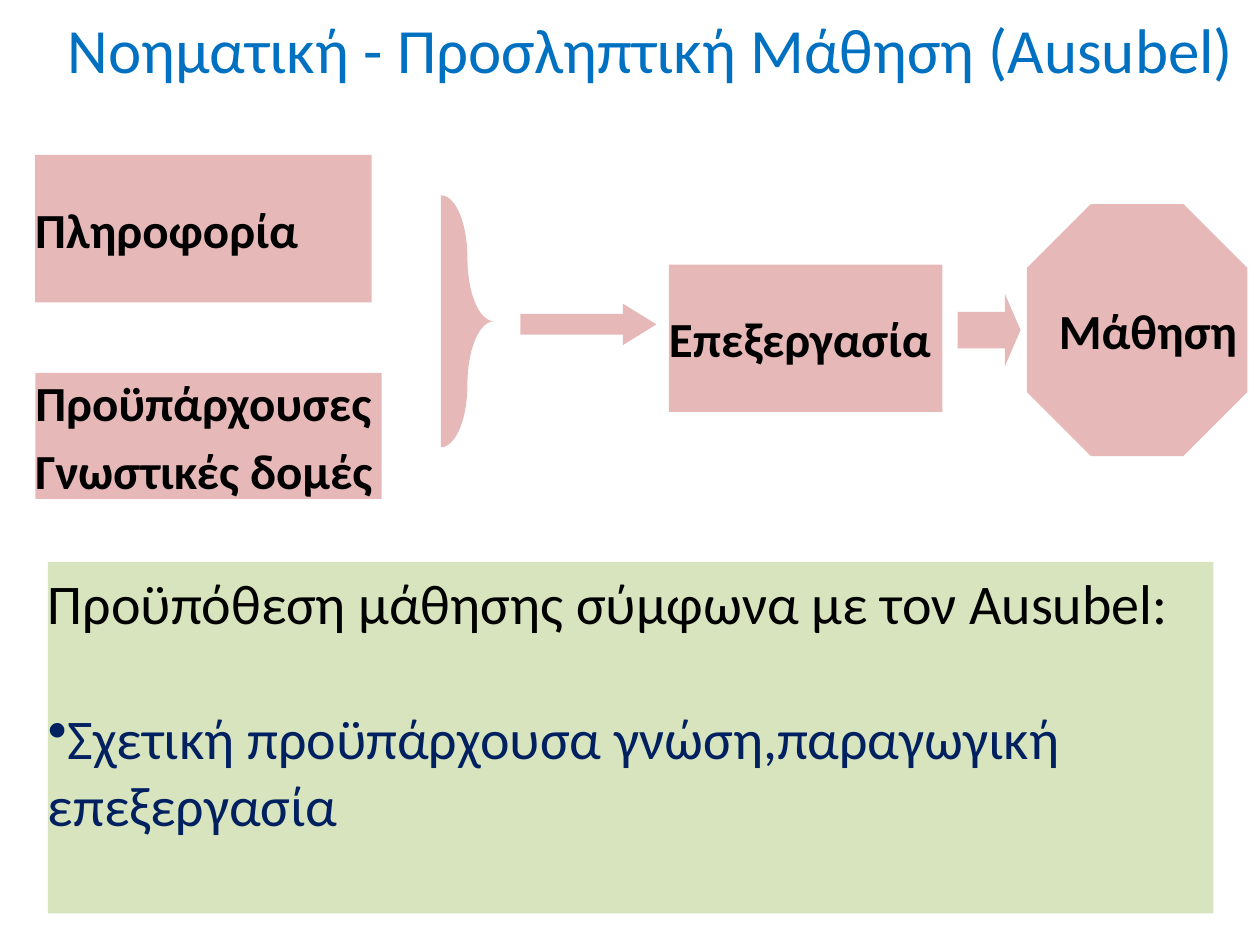
from pptx import Presentation
from pptx.dml.color import RGBColor
from pptx.enum.shapes import MSO_SHAPE as Shape
from pptx.enum.text import MSO_ANCHOR as Anchor, PP_ALIGN as Align
from pptx.oxml.xmlchemy import OxmlElement
from pptx.util import Inches, Pt

PINK = "E6B9B8"
GREEN = "D7E4BD"
BLACK = "000000"


def add_block(kind, bounds, fill, adjustments=()):
    block = page.shapes.add_shape(kind, *[Inches(length) for length in bounds])
    block.shadow.inherit = False
    block.fill.solid()
    block.fill.fore_color.rgb = RGBColor.from_string(fill)
    block.line.fill.background()
    for index, value in enumerate(adjustments):
        block.adjustments[index] = value
    frame = block.text_frame
    frame.margin_left = frame.margin_right = 0
    return block


def write(frame, index, text, size, color, bold=False, align=Align.LEFT):
    para = frame.add_paragraph() if index else frame.paragraphs[0]
    para.text = text
    para.alignment = align
    font = para.font
    font.name, font.size, font.bold = "Calibri", Pt(size), bold
    font.color.rgb = RGBColor.from_string(color)
    return para


deck = Presentation()
deck.slide_width, deck.slide_height = Inches(10), Inches(7.5)
page = deck.slides.add_slide(deck.slide_layouts[6])

title = page.shapes.add_textbox(Inches(0.33), Inches(-0.03), Inches(9.67), Inches(0.83))
title.text_frame.word_wrap = True
title.text_frame.vertical_anchor = Anchor.MIDDLE
write(title.text_frame, 0, "Νοηματική - Προσληπτική Μάθηση (Ausubel)", 36, "0070C0", align=Align.CENTER)

stages = [
    (Shape.RECTANGLE, (0.28, 1.23, 2.67, 1.17), (), ["Πληροφορία"]),
    (Shape.RECTANGLE, (0.28, 2.96, 2.75, 1), (), ["Προϋπάρχουσες", "Γνωστικές δομές"]),
    (Shape.RIGHT_BRACE, (3.5, 1.55, 0.42, 2), (1.2, 0.5), []),
    (Shape.RIGHT_ARROW, (4.13, 2.41, 1.08, 0.33), (0.5, 0.81), []),
    (Shape.RECTANGLE, (5.31, 2.1, 2.17, 1.17), (), ["Επεξεργασία"]),
    (Shape.RIGHT_ARROW, (7.6, 2.33, 0.5, 0.58), (0.5, 0.25), []),
    (Shape.OCTAGON, (8.15, 1.62, 1.75, 2), (0.29,), ["Μάθηση"]),
]
for kind, bounds, adjustments, lines in stages:
    frame = add_block(kind, bounds, PINK, adjustments).text_frame
    frame.word_wrap = False
    frame.vertical_anchor = Anchor.MIDDLE
    for index, line in enumerate(lines):
        para = write(frame, index, line, 28, BLACK, bold=True)
        if index:
            para.space_before = Pt(5.6)

premise = add_block(Shape.RECTANGLE, (0.38, 4.46, 9.25, 2.79), GREEN).text_frame
premise.word_wrap = True
premise.vertical_anchor = Anchor.TOP
write(premise, 0, "Προϋπόθεση μάθησης σύμφωνα με τον Ausubel:", 32, BLACK)
condition = premise.add_paragraph()
condition.space_before = Pt(39)
bullet = OxmlElement("a:buChar")
bullet.set("char", "•")
condition._p.get_or_add_pPr().append(bullet)
condition.text = "Σχετική προϋπάρχουσα γνώση,παραγωγική επεξεργασία"
condition.alignment = Align.LEFT
condition.font.name, condition.font.size = "Calibri", Pt(32)
condition.font.color.rgb = RGBColor.from_string("002060")

deck.save("out.pptx")
